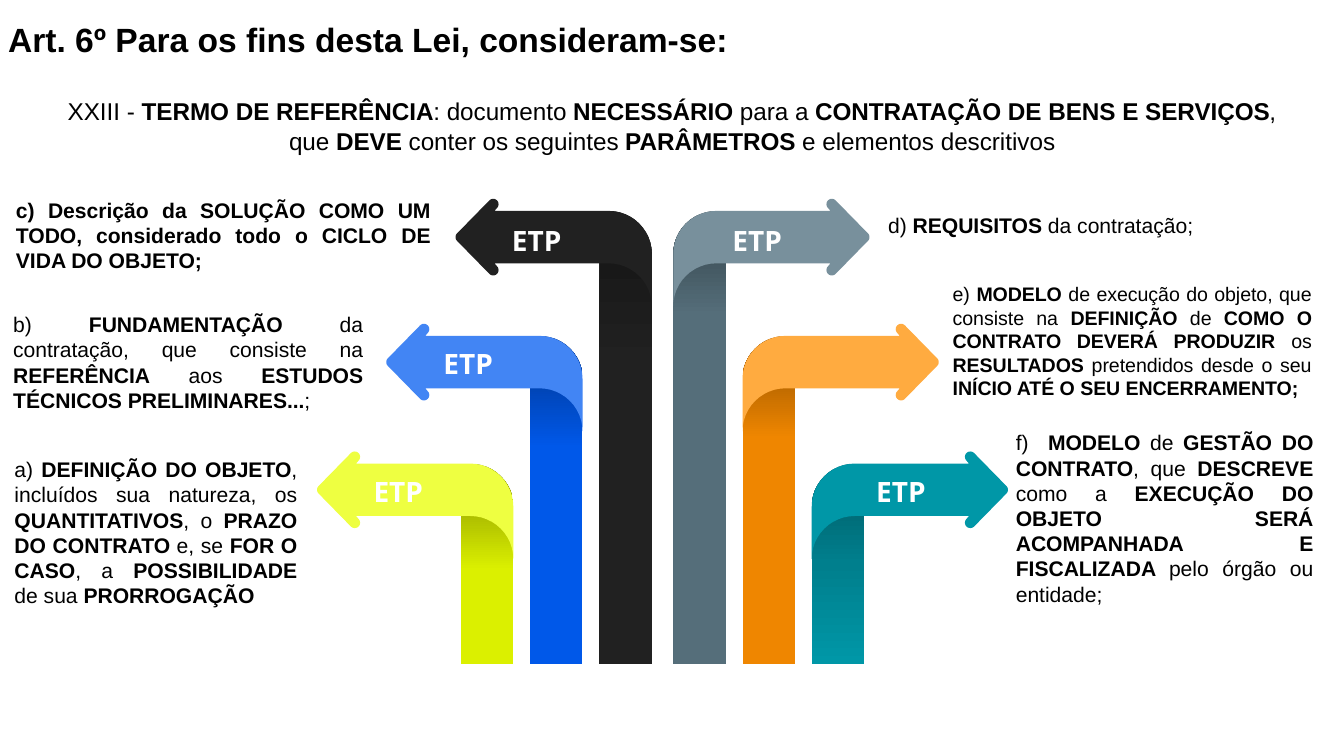
import copy
import math
import pptx
import pptx.dml.color
import pptx.enum.text
import pptx.oxml.ns
import pptx.util

Inches = pptx.util.Inches
RGB = pptx.dml.color.RGBColor
ALIGN = pptx.enum.text.PP_ALIGN
AUTO = pptx.enum.text.MSO_AUTO_SIZE

BLACK = RGB(0x00, 0x00, 0x00)
WHITE = RGB(0xFF, 0xFF, 0xFF)
SLATE = RGB(0x78, 0x90, 0x9C)
SLATE_MID = RGB(0x55, 0x6E, 0x7A)
SLATE_DARK = RGB(0x32, 0x41, 0x48)
ORANGE = RGB(0xFF, 0xAB, 0x40)
ORANGE_MID = RGB(0xEF, 0x86, 0x00)
ORANGE_DARK = RGB(0x8E, 0x4F, 0x00)
TEAL = RGB(0x00, 0x97, 0xA7)
TEAL_MID = RGB(0x00, 0x7F, 0x8D)
TEAL_DARK = RGB(0x00, 0x59, 0x63)
COAL = RGB(0x21, 0x21, 0x21)
COAL_DARK = RGB(0x14, 0x14, 0x14)
BLUE = RGB(0x42, 0x85, 0xF4)
BLUE_MID = RGB(0x00, 0x58, 0xE9)
BLUE_DARK = RGB(0x00, 0x34, 0x8A)
LIME = RGB(0xEE, 0xFF, 0x41)
LIME_MID = RGB(0xDB, 0xF0, 0x00)
LIME_DARK = RGB(0x81, 0x8E, 0x00)

WIDTH = 10
BASE = 4.94
WIDE = 0.39
BEND = 0.32
STEP = (6.04 - 5.01) / 2
TOPS = (1.57, 2.5, 3.45)


def arc(x, y, r, start, end, count=12):
    turns = [math.radians(start + (end - start) * i / count) for i in range(count + 1)]
    return [(x + r * math.cos(t), y + r * math.sin(t)) for t in turns]


class Deck:
    font = "Arial"
    label = "Open Sans"

    def __init__(self):
        self.show = pptx.Presentation()
        self.show.slide_width = Inches(WIDTH)
        self.show.slide_height = Inches(WIDTH * 9 / 16)
        self.slide = self.show.slides.add_slide(self.show.slide_layouts[6])

    def text(self, box, words, size, align=ALIGN.LEFT, color=BLACK, font=None,
             inset=True, indent=0):
        shape = self.slide.shapes.add_textbox(*map(Inches, box))
        frame = shape.text_frame
        frame.word_wrap = inset
        frame.auto_size = AUTO.SHAPE_TO_FIT_TEXT
        if not inset:
            frame.margin_left = frame.margin_right = 0
            frame.margin_top = frame.margin_bottom = 0
        para = frame.paragraphs[0]
        para.alignment = align
        if indent:
            props = para._p.get_or_add_pPr()
            props.set("marL", str(Inches(indent)))
            props.set("indent", "0")
        for i, part in enumerate(words.split("|")):
            if part:
                run = para.add_run()
                run.text = part
                run.font.name = font or self.font
                run.font.size = pptx.util.Pt(size)
                run.font.bold = i % 2 == 1
                run.font.color.rgb = color

    def outline(self, group, points):
        spots = [(Inches(x), Inches(y)) for x, y in points]
        pen = group.shapes.build_freeform(*spots[0])
        pen.add_line_segments(spots[1:], close=True)
        shape = pen.convert_to_shape()
        shape.shadow.inherit = False
        shape.line.fill.background()
        return shape

    def shade(self, shape, stops):
        fill = shape.fill
        fill.gradient()
        fill.gradient_angle = 270
        marks = shape._element.spPr.find(".//" + pptx.oxml.ns.qn("a:gsLst"))
        for _ in stops[2:]:
            marks.append(copy.deepcopy(marks[-1]))
        for mark, (place, color) in zip(fill.gradient_stops, stops):
            mark.position = place
            mark.color.rgb = color

    def arrow(self, x, top, way, color, stops):
        high = BASE - top
        curve = arc(BEND, BEND, BEND, 180, 270)
        stem = curve + [(WIDE, 0), (WIDE, high), (0, high)]
        head = (curve + [(1.17, 0)]
                + arc(1.18, -0.05, 0.04, 135, 315)
                + arc(1.42, WIDE / 2, 0.04, -45, 45)
                + arc(1.18, WIDE + 0.05, 0.04, 45, 225)
                + [(1.17, WIDE)]
                + arc(BEND, WIDE + BEND, BEND, 270, 180))
        group = self.slide.shapes.add_group_shape()
        lower, upper = [
            self.outline(group, [(x + way * u, top + v) for u, v in form])
            for form in (stem, head)]
        self.shade(lower, stops)
        upper.fill.solid()
        upper.fill.fore_color.rgb = color

    def tag(self, x, y):
        self.text((x, y, 0.37, 0.25), "|ETP", 15, color=WHITE, font=self.label, inset=False)


def main():
    deck = Deck()
    sides = (
        (5.01, 1, (
            (SLATE, ((0, SLATE_DARK), (0.23, SLATE_MID))),
            (ORANGE, ((0, ORANGE_DARK), (0.31, ORANGE_MID))),
            (TEAL, ((0, TEAL_DARK), (0.5, TEAL_MID), (1, TEAL))))),
        (4.85, -1, (
            (COAL, ((0, COAL_DARK), (0.35, COAL))),
            (BLUE, ((0, BLUE_DARK), (0.34, BLUE_MID))),
            (LIME, ((0, LIME_DARK), (0.53, LIME_MID))))),
    )
    for x, way, tints in sides:
        for i, (top, (color, stops)) in enumerate(zip(TOPS, tints)):
            deck.arrow(x + way * STEP * i, top, way, color, stops)

    for x, y in ((2.78, 3.53), (6.52, 3.53), (3.3, 2.58), (3.81, 1.66), (5.45, 1.66)):
        deck.tag(x, y)

    deck.text((0.06, 0.14, 5.41, 0.3),
              "|Art. 6º Para os fins desta Lei, consideram-se:", 18, inset=False)
    deck.text((0.38, 0.67, 9.24, 0.54),
              "XXIII - |TERMO DE REFERÊNCIA|: documento |NECESSÁRIO| para a "
              "|CONTRATAÇÃO DE BENS E SERVIÇOS|, que |DEVE| conter os seguintes "
              "|PARÂMETROS| e elementos descritivos", 13, ALIGN.CENTER)

    items = (
        ((0.01, 3.35, 2.3, 1.43), 11.25, 0,
         "a) |DEFINIÇÃO DO OBJETO|, incluídos sua natureza, os |QUANTITATIVOS|, o "
         "|PRAZO DO CONTRATO |e, se |FOR O CASO|, a |POSSIBILIDADE| de sua |PRORROGAÇÃO"),
        ((0, 2.27, 2.8, 0.86), 11.25, 0,
         "b) |FUNDAMENTAÇÃO| da contratação, que consiste na |REFERÊNCIA| aos "
         "|ESTUDOS TÉCNICOS PRELIMINARES...|;"),
        ((0.02, 1.42, 3.28, 0.67), 11.25, 0,
         "|c) Descrição da SOLUÇÃO COMO UM TODO, considerado todo o CICLO DE VIDA DO OBJETO;"),
        ((7.24, 3.15, 2.63, 1.43), 11.25, 0.22,
         "f)  |MODELO| de |GESTÃO DO CONTRATO|, que |DESCREVE| como a "
         "|EXECUÇÃO DO OBJETO SERÁ ACOMPANHADA E FISCALIZADA |pelo órgão ou entidade;"),
        ((6.77, 2.05, 3.09, 0.98), 10.5, 0.22,
         "e) |MODELO| de execução do objeto, que consiste na |DEFINIÇÃO| de "
         "|COMO O CONTRATO DEVERÁ PRODUZIR| os |RESULTADOS| pretendidos desde o seu "
         "|INÍCIO ATÉ O SEU ENCERRAMENTO;"),
        ((6.51, 1.53, 2.8, 0.29), 11.25, 0,
         "d) |REQUISITOS| da contratação;"),
    )
    for box, size, indent, words in items:
        deck.text(box, words, size, ALIGN.JUSTIFY, indent=indent)

    deck.show.save("out.pptx")


if __name__ == "__main__":
    main()
